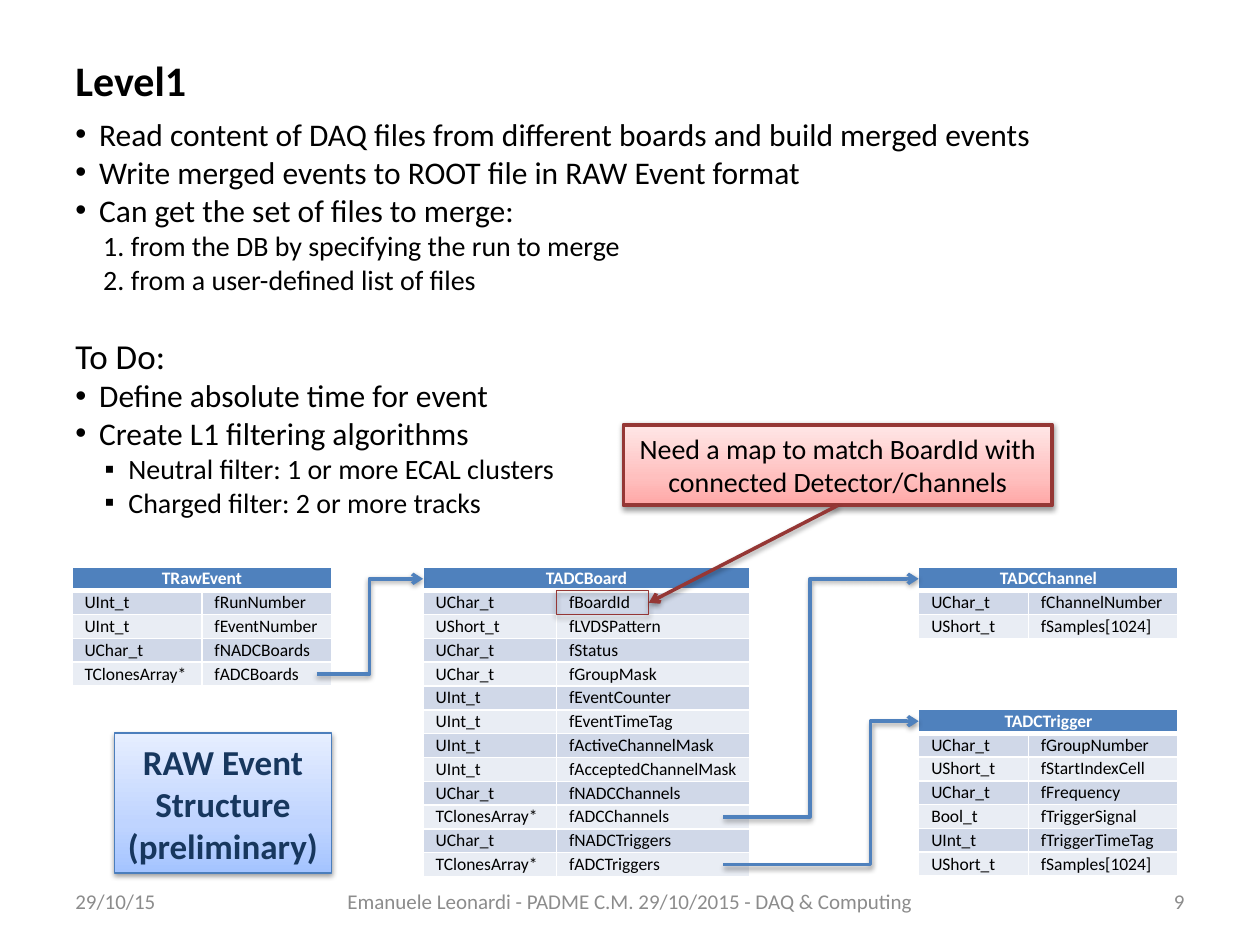
"""Builds the Level1 slide with its raw event structure diagram."""
from collections import namedtuple
from dataclasses import dataclass

from lxml import etree
from pptx import Presentation
from pptx import util as u
from pptx.dml.color import RGBColor
from pptx.enum import shapes, text
from pptx.oxml.ns import qn

Box = namedtuple("Box", "left top width height")


@dataclass(frozen=True)
class Theme:
    """Colours, type sizes and row height of the slide."""
    font: str = "Calibri"
    ink: str = "000000"
    paper: str = "FFFFFF"
    grey: str = "8C8C8C"
    navy: str = "17375E"
    blue: str = "4F81BD"
    edge: str = "4B7EBC"
    red: str = "953735"
    bands: tuple = ("D0D8E8", "E9EDF4")
    blues: tuple = ("A4C4FF", "BFD4FF", "E6EEFF")
    reds: tuple = ("FFA6A5", "FFC0BF", "FFE7E7")
    title: int = 24
    head: int = 20
    body: int = 18
    sub: int = 16
    foot: int = 12
    cell: int = 10
    row: float = 0.48


THEME = Theme()
ALIGN = text.PP_ALIGN
DOT = dict(size=THEME.body, bullet="•", margin=0.48, hang=0.48)
NUMBER = dict(size=THEME.sub, bullet="1.", margin=1.12, hang=0.56)
SQUARE = dict(size=THEME.sub, bullet="▪", margin=1.07, hang=0.48)

NOTES = [
    ("Level1", dict(size=THEME.title, bold=True, after=6)),
    ("Read content of DAQ files from different boards and build merged events", DOT),
    ("Write merged events to ROOT file in RAW Event format", DOT),
    ("Can get the set of files to merge:", DOT),
    ("from the DB by specifying the run to merge", NUMBER),
    ("from a user-defined list of files", NUMBER),
    ("To Do:", dict(size=THEME.head, before=22)),
    ("Define absolute time for event", DOT),
    ("Create L1 filtering algorithms", DOT),
    ("Neutral filter: 1 or more ECAL clusters", SQUARE),
    ("Charged filter: 2 or more tracks", SQUARE),
]

RAW_EVENT = [("UInt_t", "fRunNumber"), ("UInt_t", "fEventNumber"),
             ("UChar_t", "fNADCBoards"), ("TClonesArray*", "fADCBoards")]
BOARD = [("UChar_t", "fBoardId"), ("UShort_t", "fLVDSPattern"), ("UChar_t", "fStatus"),
         ("UChar_t", "fGroupMask"), ("UInt_t", "fEventCounter"), ("UInt_t", "fEventTimeTag"),
         ("UInt_t", "fActiveChannelMask"), ("UInt_t", "fAcceptedChannelMask"),
         ("UChar_t", "fNADCChannels"), ("TClonesArray*", "fADCChannels"),
         ("UChar_t", "fNADCTriggers"), ("TClonesArray*", "fADCTriggers")]
CHANNEL = [("UChar_t", "fChannelNumber"), ("UShort_t", "fSamples[1024]")]
TRIGGER = [("UChar_t", "fGroupNumber"), ("UShort_t", "fStartIndexCell"),
           ("UChar_t", "fFrequency"), ("Bool_t", "fTriggerSignal"),
           ("UInt_t", "fTriggerTimeTag"), ("UShort_t", "fSamples[1024]")]


def cm(values):
    """Turn numbers into centimetre lengths."""
    return [u.Cm(value) for value in values]


def node(parent, tag, **attributes):
    """Append a drawing element with its attributes."""
    child = etree.SubElement(parent, qn("a:" + tag))
    for name, value in attributes.items():
        child.set(name, str(value))
    return child


def write(frame, words, size, color=THEME.ink, bold=False, align=ALIGN.LEFT,
          before=0, after=0, bullet=None, margin=0, hang=0):
    """Add one formatted paragraph to a text frame."""
    para = frame.paragraphs[0] if not frame.text else frame.add_paragraph()
    para.alignment = align
    para.space_before, para.space_after = u.Pt(before), u.Pt(after)
    span = para.add_run()
    span.text = words
    span.font.name, span.font.size, span.font.bold = THEME.font, u.Pt(size), bold
    span.font.color.rgb = RGBColor.from_string(color)
    if bullet:
        props = para._p.get_or_add_pPr()
        props.set("marL", str(u.Cm(margin)))
        props.set("indent", str(-u.Cm(hang)))
        if bullet == "1.":
            node(props, "buFont", typeface=THEME.font)
            node(props, "buAutoNum", type="arabicPeriod")
        else:
            node(props, "buFont", typeface="Arial")
            node(props, "buChar", char=bullet)


def cast_shadow(shape):
    """Give a shape or connector a soft shadow below it."""
    effects = node(shape._element.spPr, "effectLst")
    shadow = node(effects, "outerShdw", blurRad=u.Pt(3.1), dist=u.Pt(1.6),
                  dir=5400000, rotWithShape=0)
    node(node(shadow, "srgbClr", val=THEME.ink), "alpha", val=38000)


def add_text(page, box, paragraphs, anchor=text.MSO_ANCHOR.TOP, wrap=True):
    """Place a text box holding (words, format) paragraphs."""
    frame = page.shapes.add_textbox(*cm(box)).text_frame
    frame.word_wrap, frame.vertical_anchor = wrap, anchor
    for words, style in paragraphs:
        write(frame, words, **style)


def add_panel(page, box, line, width, shades=None, lines=(), wrap=True, **style):
    """Place a shadowed rectangle with an optional gradient and centred lines."""
    panel = page.shapes.add_shape(shapes.MSO_SHAPE.RECTANGLE, *cm(box))
    if shades:
        gradient = node(panel._element.spPr, "gradFill", rotWithShape=1)
        stops = node(gradient, "gsLst")
        for place, shade in zip((0, 35000, 100000), shades):
            node(node(stops, "gs", pos=place), "srgbClr", val=shade)
        node(gradient, "lin", ang=16200000, scaled=0)
    else:
        panel.fill.background()
    panel.line.color.rgb = RGBColor.from_string(line)
    panel.line.width = u.Pt(width)
    cast_shadow(panel)
    panel.text_frame.word_wrap = wrap
    for words in lines:
        write(panel.text_frame, words, align=ALIGN.CENTER, **style)


def add_arrow(page, start, end, color, bend=None):
    """Draw an arrow, straight or with its elbow at x = bend."""
    kind = shapes.MSO_CONNECTOR.STRAIGHT if bend is None else shapes.MSO_CONNECTOR.ELBOW
    arrow = page.shapes.add_connector(kind, *cm(start + end))
    arrow.line.color.rgb = RGBColor.from_string(color)
    arrow.line.width = u.Pt(2)
    node(arrow.line._get_or_add_ln(), "tailEnd", type="arrow")
    if bend is not None:
        share = round(100000 * (bend - start[0]) / (end[0] - start[0]))
        guides = arrow._element.spPr.find(qn("a:prstGeom")).get_or_add_avLst()
        node(guides, "gd", name="adj1", fmla=f"val {share}")
    cast_shadow(arrow)


def fill_cell(cell, words, fill, bottom=1, **style):
    """Set the text, fill and white borders of a table cell."""
    cell.margin_top = cell.margin_bottom = 0
    cell.vertical_anchor = text.MSO_ANCHOR.MIDDLE
    write(cell.text_frame, words, THEME.cell, **style)
    props = cell._tc.get_or_add_tcPr()
    for side, width in (("lnL", 1), ("lnR", 1), ("lnT", 1), ("lnB", bottom)):
        border = node(props, side, w=u.Pt(width))
        node(node(border, "solidFill"), "srgbClr", val=THEME.paper)
    cell.fill.solid()
    cell.fill.fore_color.rgb = RGBColor.from_string(fill)


def add_class(page, left, top, widths, name, members):
    """Place the table of one class and return its box."""
    count = len(members) + 1
    box = Box(left, top, sum(widths), count * THEME.row)
    grid = page.shapes.add_table(count, 2, *cm(box)).table
    for column, width in zip(grid.columns, widths):
        column.width = u.Cm(width)
    for row in grid.rows:
        row.height = u.Cm(THEME.row)
    grid.cell(0, 0).merge(grid.cell(0, 1))
    fill_cell(grid.cell(0, 0), name, THEME.blue, bottom=3, color=THEME.paper,
              bold=True, align=ALIGN.CENTER)
    for index, member in enumerate(members):
        for column, words in enumerate(member):
            fill_cell(grid.cell(index + 1, column), words, THEME.bands[index % 2])
    return box


def row_middle(box, row):
    """Return the height of the middle of a table row."""
    return box.top + (row + 0.5) * THEME.row


def add_diagram(page, box):
    """Place the four class tables, their links and the labels."""
    label = Box(box.left + 0.86, box.top + 3.35, 4.37, 2.82)
    callout = Box(box.left + 11.12, box.top - 2.87, 8.64, 1.63)
    right = box.left + 17.07
    event = add_class(page, box.left, box.top, (2.62, 2.62), "TRawEvent", RAW_EVENT)
    board = add_class(page, box.left + 7.08, box.top, (2.69, 3.89), "TADCBoard", BOARD)
    channel = add_class(page, right, box.top, (2.21, 3.02), "TADCChannel", CHANNEL)
    trigger = add_class(page, right, box.top + 2.87, (2.21, 3.02), "TADCTrigger", TRIGGER)
    mark = Box(board.left + 2.69, board.top + THEME.row, 1.86, THEME.row)

    add_panel(page, label, THEME.edge, 0.75, THEME.blues,
              ("RAW Event", "Structure", "(preliminary)"), wrap=False,
              size=THEME.head, color=THEME.navy, bold=True)
    add_panel(page, mark, THEME.red, 0.75)
    add_panel(page, callout, THEME.red, 2.25, THEME.reds,
              ("Need a map to match BoardId with connected Detector/Channels",),
              size=THEME.sub)
    add_arrow(page, (callout.left + callout.width / 2, callout.top + callout.height),
              (mark.left + mark.width, mark.top + mark.height / 2), THEME.red)
    for source, row, inset, target, bend in ((board, 12, 0.53, trigger, 17.55),
                                             (board, 10, 0.53, channel, 16.33),
                                             (event, 4, 0.3, board, 7.45)):
        add_arrow(page, (source.left + source.width - inset, row_middle(source, row)),
                  (target.left, row_middle(target, 0)), THEME.blue, bend)


def add_footer(page, box):
    """Place the date, the talk and the page number."""
    talk = "Emanuele Leonardi - PADME C.M. 29/10/2015 - DAQ & Computing"
    for offset, width, words, align in ((0, 2.97, "29/10/15", ALIGN.LEFT),
                                        (3.48, 15.9, talk, ALIGN.CENTER),
                                        (box.width - 2.95, 2.95, "9", ALIGN.RIGHT)):
        style = dict(size=THEME.foot, color=THEME.grey, align=align)
        add_text(page, Box(box.left + offset, box.top, width, box.height),
                 [(words, style)], anchor=text.MSO_ANCHOR.MIDDLE)


def main():
    """Build and save the deck."""
    deck = Presentation()
    deck.slide_width, deck.slide_height = cm((25.4, 19.05))
    page = deck.slides.add_slide(deck.slide_layouts[6])
    add_footer(page, Box(1.27, 17.65, 22.86, 1.02))
    add_text(page, Box(1.27, 0.97, 20.6, 9.65), NOTES, wrap=False)
    add_diagram(page, Box(1.45, 11.43, 22.3, 6.24))
    deck.save("out.pptx")


if __name__ == "__main__":
    main()
